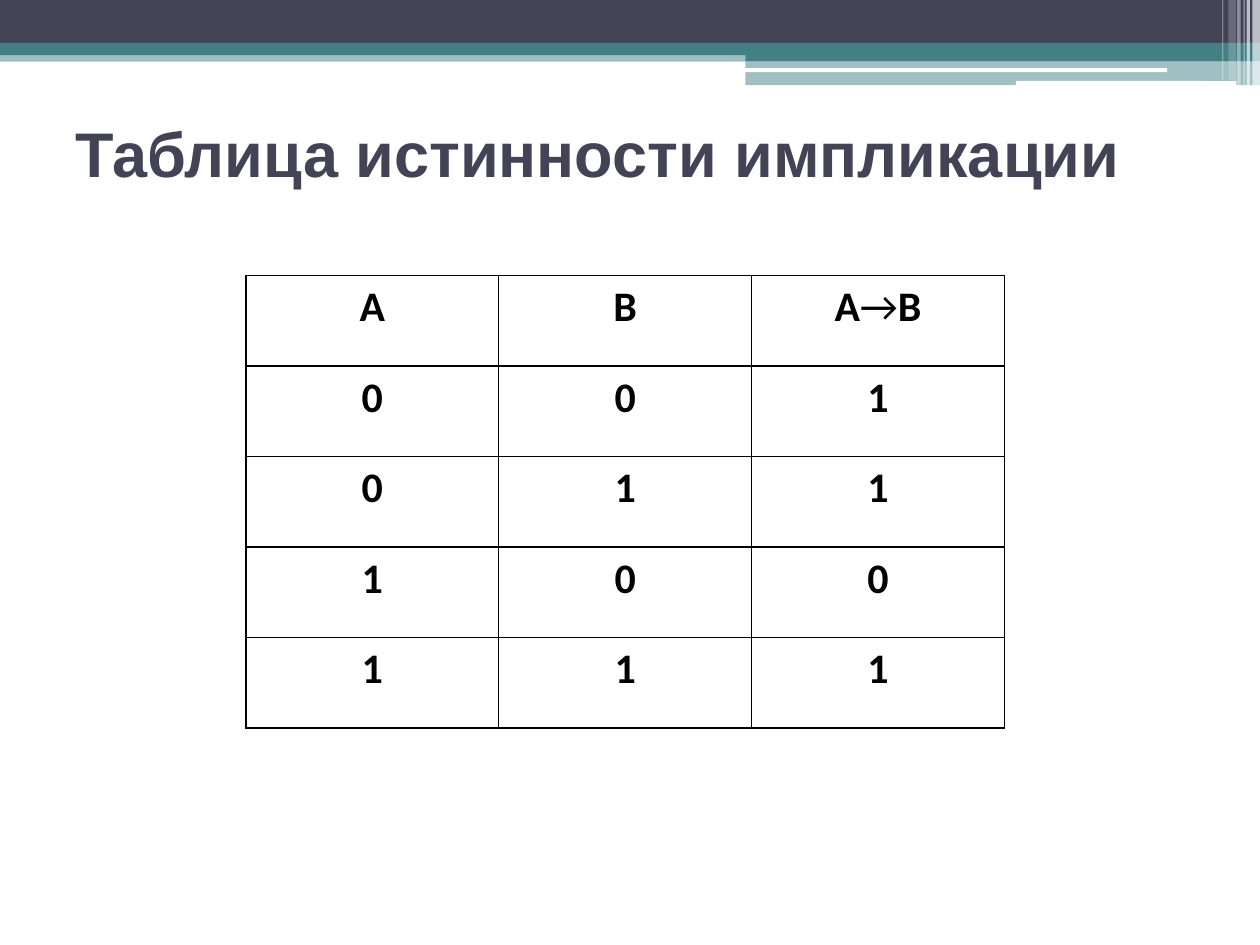
"""Builds a slide with the truth table of implication."""
from dataclasses import dataclass

import lxml.etree
import pptx
import pptx.dml.color
import pptx.enum.shapes
import pptx.enum.text
import pptx.oxml
import pptx.oxml.ns
import pptx.util

Pt = pptx.util.Pt
Align = pptx.enum.text.PP_ALIGN
Kind = pptx.enum.shapes.MSO_SHAPE
qn = pptx.oxml.ns.qn


@dataclass(frozen=True)
class Theme:
    dark: str = "424456"
    teal: str = "438086"
    white: str = "FFFFFF"
    black: str = "000000"
    head: int = 36
    cell: int = 24


theme = Theme()


def write(para, text, size, color, font, bold=True, align=Align.LEFT):
    para.alignment = align
    run = para.add_run()
    run.text = text
    run.font.size = Pt(size)
    run.font.bold = bold
    run.font.name = font
    run.font.color.rgb = pptx.dml.color.RGBColor.from_string(color)


deck = pptx.Presentation()
deck.slide_width, deck.slide_height = Pt(720), Pt(540)
slide = deck.slides.add_slide(deck.slide_layouts[5])

bars = [
    (0, 28.8, 720, 6.5, theme.teal, 50),
    (0, 0, 720, 24.5, theme.dark, 100),
    (0, 24.5, 720, 7, theme.teal, 100),
    (426, 28, 294, 7, theme.teal, 100),
    (426, 35, 294, 13.7, theme.teal, 50),
    (425.5, 39, 241.5, 2.2, theme.white, 100),
    (580.5, 46.3, 126, 2.7, theme.white, 100),
    (715.7, 0, 4.3, 49, theme.white, 65),
    (712.3, 0, 2, 49, theme.white, 65),
    (710.6, 0, 0.7, 49, theme.white, 60),
    (707, 0, 2, 49, theme.white, 40),
    (702, 0, 4.3, 46, theme.white, 20),
    (698.4, 0, 0.7, 46, theme.white, 30),
]
for left, top, width, height, color, alpha in bars:
    round_bar = left in (425.5, 580.5)
    kind = Kind.ROUNDED_RECTANGLE if round_bar else Kind.RECTANGLE
    bar = slide.shapes.add_shape(kind, Pt(left), Pt(top), Pt(width), Pt(height))
    bar.shadow.inherit = False
    bar.line.fill.background()
    bar.fill.solid()
    bar.fill.fore_color.rgb = pptx.dml.color.RGBColor.from_string(color)
    if alpha < 100:
        tint = bar.fill._xPr.find(".//" + qn("a:srgbClr"))
        lxml.etree.SubElement(tint, qn("a:alpha"), val=str(alpha * 1000))

title = slide.shapes.title
title.left, title.top, title.width, title.height = Pt(36), Pt(42), Pt(648), Pt(90)
title.text_frame.auto_size = pptx.enum.text.MSO_AUTO_SIZE.NONE
title.text_frame.vertical_anchor = pptx.enum.text.MSO_ANCHOR.MIDDLE
write(title.text_frame.paragraphs[0], "Таблица истинности импликации",
      size=theme.head, color=theme.dark, font="Arial")
title.element.getparent().append(title.element)

rows = [("А", "В", "А→В")]
rows += [(str(a), str(b), str(int(not a or b))) for a in (0, 1) for b in (0, 1)]
frame = slide.shapes.add_table(len(rows), 3, Pt(140.5), Pt(157.5), Pt(433.5), Pt(258.5))
table = frame.table
table.first_row = table.horz_banding = False
for row in table.rows:
    row.height = Pt(51.7)
for col in table.columns:
    col.width = Pt(144.5)

for y, row in enumerate(rows):
    for x, text in enumerate(row):
        cell = table.cell(y, x)
        para = cell.text_frame.paragraphs[0]
        for sign in text:
            write(para, sign, size=theme.cell, color=theme.black, font="Calibri",
                  bold=sign != "→", align=Align.CENTER)
        props = cell._tc.get_or_add_tcPr()
        for side in ("a:lnL", "a:lnR", "a:lnT", "a:lnB"):
            line = lxml.etree.SubElement(props, qn(side), w=str(Pt(1)))
            fill = lxml.etree.SubElement(line, qn("a:solidFill"))
            lxml.etree.SubElement(fill, qn("a:srgbClr"), val=theme.black)
        cell.fill.background()

deck.save("out.pptx")
